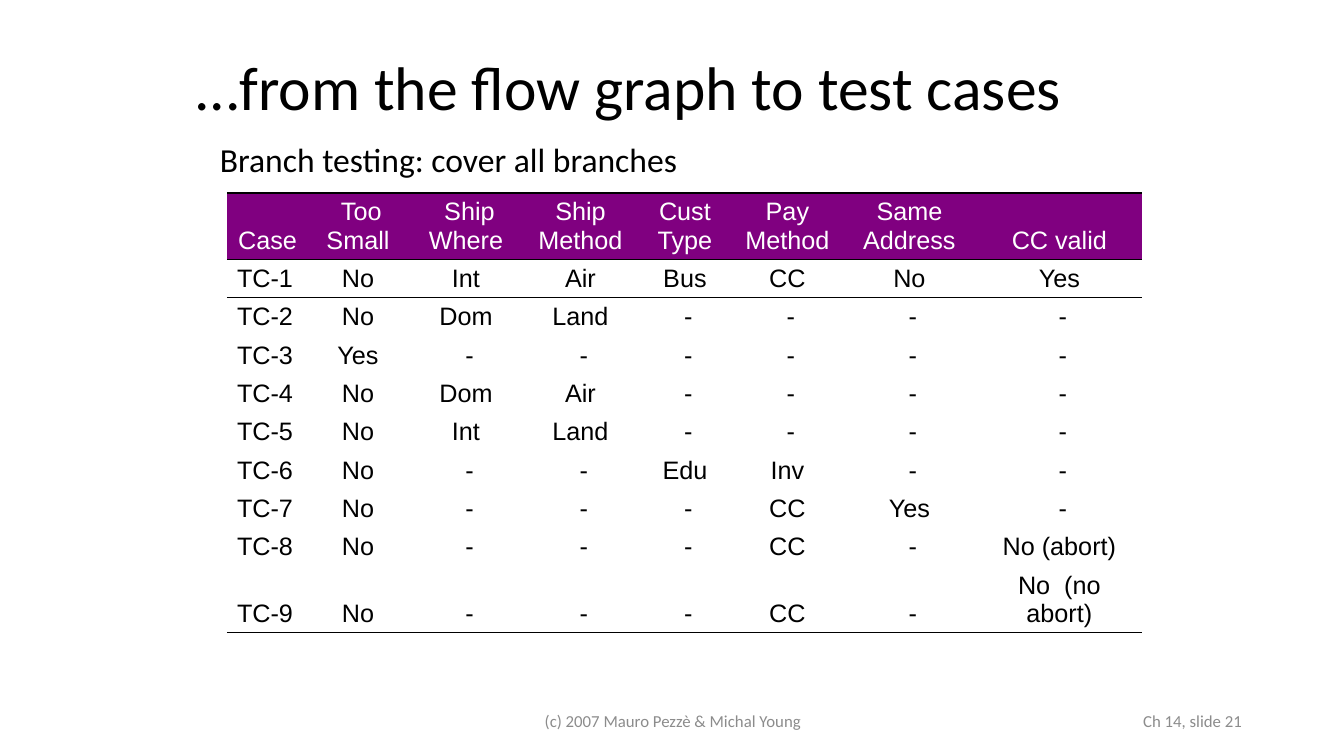
"""Builds the slide that derives test cases from the flow graph."""
import lxml.etree
import pptx
import pptx.dml.color
import pptx.enum.text
import pptx.oxml.ns
import pptx.util

ALIGN = pptx.enum.text.PP_ALIGN
ANCHOR = pptx.enum.text.MSO_ANCHOR
BLACK = pptx.dml.color.RGBColor(0, 0, 0)
WHITE = pptx.dml.color.RGBColor(255, 255, 255)
GRAY = pptx.dml.color.RGBColor(0x8C, 0x8C, 0x8C)
PURPLE = pptx.dml.color.RGBColor(0x80, 0, 0x80)
NO_GRID_STYLE = "{2D5ABB26-0587-4C30-8999-92F81FD0307C}"

TITLE = ("...from the flow graph to test cases", (184, 15, 966, 152))
LABELS = [
    ("(c) 2007 Mauro Pezzè & Michal Young", (446, 701, 454, 40), 12, GRAY, ALIGN.CENTER, ANCHOR.MIDDLE),
    (" Ch 14, slide 21", (950, 701, 302, 40), 12, GRAY, ALIGN.RIGHT, ANCHOR.MIDDLE),
    ("Branch testing: cover all branches", (210, 134, 532, 50), 24, BLACK, ALIGN.LEFT, ANCHOR.BOTTOM),
]
NA = " -"
CASES = [
    ("Case", " Too Small", " Ship Where", "Ship Method", "Cust Type", "Pay Method", "Same Address", "CC valid"),
    ("TC-1", "No", "Int", "Air", "Bus", "CC", "No", "Yes"),
    ("TC-2", "No", "Dom", "Land", NA, NA, NA, NA),
    ("TC-3", "Yes", NA, NA, NA, NA, NA, NA),
    ("TC-4", "No", "Dom", "Air", NA, NA, NA, NA),
    ("TC-5", "No", "Int", "Land", NA, NA, NA, NA),
    ("TC-6", "No", NA, NA, "Edu", "Inv", NA, NA),
    ("TC-7", "No", NA, NA, NA, "CC", "Yes", NA),
    ("TC-8", "No", NA, NA, NA, "CC", NA, "No (abort)"),
    ("TC-9", "No", NA, NA, NA, "CC", NA, "No  (no abort)"),
]
TABLE_LEFT, TABLE_TOP = 227, 193
COL_WIDTHS = [81, 100, 116, 113, 96, 109, 135, 165]
TALL_ROW, ROW = 66, 38


def px(n):
    """Turns px into EMU."""
    return pptx.util.Emu(round(n * 914400 / 100.8))


def write(tf, text, size, font, color, align):
    """Puts one formatted run into a text frame."""
    tf.word_wrap = True
    p = tf.paragraphs[0]
    p.alignment = align
    r = p.add_run()
    r.text = text
    r.font.size = pptx.util.Pt(size)
    r.font.name = font
    r.font.color.rgb = color
    return p


def add_border(cell, side):
    """Draws a black one-point line on one side of a cell."""
    tc_pr = cell._tc.get_or_add_tcPr()
    qn = pptx.oxml.ns.qn
    ln = lxml.etree.SubElement(tc_pr, qn("a:" + side), w=str(pptx.util.Pt(1)))
    fill = lxml.etree.SubElement(ln, qn("a:solidFill"))
    lxml.etree.SubElement(fill, qn("a:srgbClr"), val=str(BLACK))


def add_title(s):
    """Fills the title placeholder."""
    text, box = TITLE
    sp = s.shapes.title
    sp.left, sp.top, sp.width, sp.height = map(px, box)
    tf = sp.text_frame
    tf.auto_size = pptx.enum.text.MSO_AUTO_SIZE.NONE
    tf.vertical_anchor = ANCHOR.MIDDLE
    write(tf, text, 44, "Calibri", BLACK, ALIGN.LEFT).line_spacing = 0.9


def add_cases(s):
    """Adds the table of test cases."""
    last = len(CASES) - 1
    heights = [TALL_ROW if i in (0, last) else ROW for i in range(len(CASES))]
    box = map(px, (TABLE_LEFT, TABLE_TOP, sum(COL_WIDTHS), sum(heights)))
    table = s.shapes.add_table(len(CASES), len(COL_WIDTHS), *box).table
    table.first_row = table.horz_banding = False
    table._tbl.tblPr.find(pptx.oxml.ns.qn("a:tableStyleId")).text = NO_GRID_STYLE
    for column, width in zip(table.columns, COL_WIDTHS):
        column.width = px(width)
    for i, values in enumerate(CASES):
        table.rows[i].height = px(heights[i])
        for j, value in enumerate(values):
            cell = table.cell(i, j)
            cell.vertical_anchor = ANCHOR.BOTTOM
            if i in (0, 1):
                add_border(cell, "lnT")
            if i in (0, last):
                add_border(cell, "lnB")
            if i == 0:
                cell.fill.solid()
                cell.fill.fore_color.rgb = PURPLE
            else:
                cell.fill.background()
            align = ALIGN.LEFT if i and j == 0 else ALIGN.CENTER
            write(cell.text_frame, value, 18, "Arial", BLACK if i else WHITE, align)


def main():
    """Builds and saves the slide."""
    prs = pptx.Presentation()
    prs.slide_width, prs.slide_height = px(1344), px(756)
    s = prs.slides.add_slide(prs.slide_layouts[5])
    add_title(s)
    add_cases(s)
    for text, box, size, color, align, anchor in LABELS:
        tf = s.shapes.add_textbox(*map(px, box)).text_frame
        tf.vertical_anchor = anchor
        write(tf, text, size, "Calibri", color, align)
    prs.save("out.pptx")


if __name__ == "__main__":
    main()
